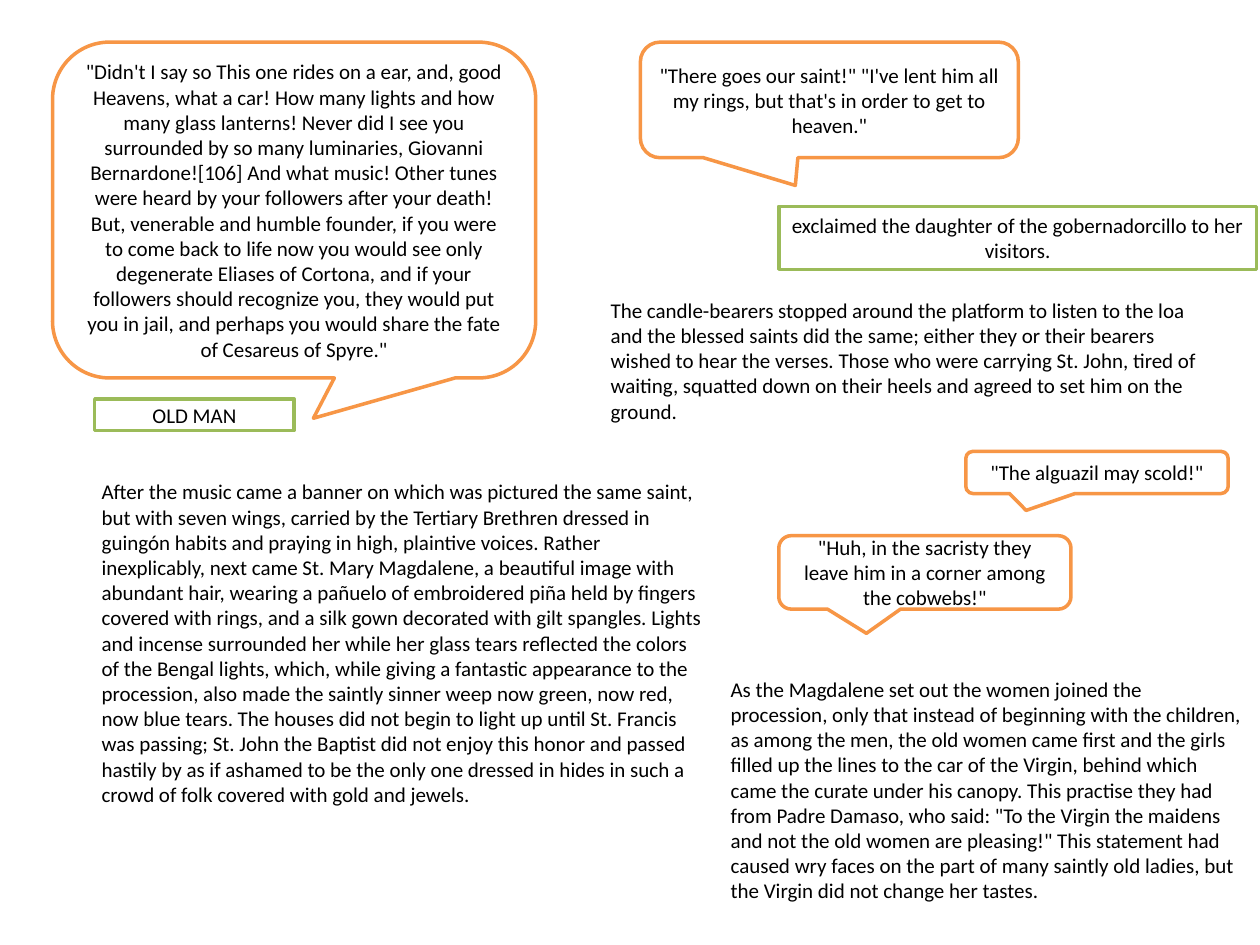
"""Build a slide of story passages, speech bubbles and speaker labels."""
from pptx import Presentation
from pptx.dml.color import RGBColor
from pptx.enum.shapes import MSO_SHAPE
from pptx.enum.text import MSO_ANCHOR, MSO_AUTO_SIZE, PP_ALIGN
from pptx.util import Cm, Pt

BUBBLES = [
    ((1.06, 0.85, 9.74, 6.77), (0.04, 0.62, 0.17),
     "\"Didn't I say so This one rides on a ear, and, good Heavens, what a car! "
     "How many lights and how many glass lanterns! Never did I see you surrounded "
     "by so many luminaries, Giovanni Bernardone![106] And what music! Other tunes "
     "were heard by your followers after your death! But, venerable and humble "
     "founder, if you were to come back to life now you would see only degenerate "
     "Eliases of Cortona, and if your followers should recognize you, they would "
     "put you in jail, and perhaps you would share the fate of Cesareus of Spyre.\""),
    ((12.91, 0.85, 7.62, 2.33), (-0.09, 0.74, 0.17),
     "\"There goes our saint!\" \"I've lent him all my rings, but that's in order "
     "to get to heaven.\""),
    ((19.47, 9.1, 5.29, 0.85), (-0.27, 0.9, 0.17),
     "\"The alguazil may scold!\""),
    ((15.7, 10.8, 5.89, 1.48), (-0.2, 0.83, 0.17),
     "\"Huh, in the sacristy they leave him in a corner among the cobwebs!\""),
]

LABELS = [
    ((1.91, 8.04, 4.02, 0.64), "OLD MAN"),
    ((15.7, 4.16, 9.63, 1.27),
     "exclaimed the daughter of the gobernadorcillo to her visitors."),
]

PASSAGES = [
    ((1.8, 9.53, 12.7, 6.93), [
        "After the music came a banner on which was pictured the same saint, but with "
        "seven wings, carried by the Tertiary Brethren dressed in guingón habits and "
        "praying in high, plaintive voices.",
        "Rather inexplicably, next came St. Mary Magdalene, a beautiful image with "
        "abundant hair, wearing a pañuelo of embroidered piña held by fingers covered "
        "with rings, and a silk gown decorated with gilt spangles.",
        "Lights and incense surrounded her while her glass tears reflected the colors "
        "of the Bengal lights, which, while giving a fantastic appearance to the "
        "procession, also made the saintly sinner weep now green, now red, now blue "
        "tears.",
        "The houses did not begin to light up until St. Francis was passing; St. John "
        "the Baptist did not enjoy this honor and passed hastily by as if ashamed to "
        "be the only one dressed in hides in such a crowd of folk covered with gold "
        "and jewels.",
    ]),
    ((12.06, 5.87, 12.7, 2.82), [
        "The candle-bearers stopped around the platform to listen to the loa and the "
        "blessed saints did the same; either they or their bearers wished to hear the "
        "verses.",
        "Those who were carrying St. John, tired of waiting, squatted down on their "
        "heels and agreed to set him on the ground.",
    ]),
    ((14.48, 13.51, 10.8, 4.88), [
        "As the Magdalene set out the women joined the procession, only that instead "
        "of beginning with the children, as among the men, the old women came first "
        "and the girls filled up the lines to the car of the Virgin, behind which came "
        "the curate under his canopy.",
        "This practise they had from Padre Damaso, who said: \"To the Virgin the "
        "maidens and not the old women are pleasing!\"",
        "This statement had caused wry faces on the part of many saintly old ladies, "
        "but the Virgin did not change her tastes.",
    ]),
]

ORANGE, GREEN, WHITE, BLACK = "F79646", "9BBB59", "FFFFFF", "000000"
FONT = {"name": "Calibri", "size": Pt(12)}
CENTRED = {"word_wrap": True, "vertical_anchor": MSO_ANCHOR.MIDDLE}
FLOWING = {"word_wrap": True, "auto_size": MSO_AUTO_SIZE.SHAPE_TO_FIT_TEXT}


def paint(color_format, color):
    color_format.rgb = RGBColor.from_string(color)


def apply_format(target, values):
    for name, value in values.items():
        setattr(target, name, value)


def write(shape, text, frame_format, alignment):
    apply_format(shape.text_frame, frame_format)
    paragraph = shape.text_frame.paragraphs[0]
    paragraph.alignment = alignment
    run = paragraph.add_run()
    run.text = text
    apply_format(run.font, FONT)
    paint(run.font.color, BLACK)


def add_outlined(slide, kind, box, text, color):
    shape = slide.shapes.add_shape(kind, *map(Cm, box))
    shape.shadow.inherit = False
    shape.fill.solid()
    paint(shape.fill.fore_color, WHITE)
    paint(shape.line.color, color)
    shape.line.width = Pt(2)
    write(shape, text, CENTRED, PP_ALIGN.CENTER)
    return shape


def main():
    presentation = Presentation()
    apply_format(presentation, {"slide_width": Cm(25.4), "slide_height": Cm(19.05)})
    slide = presentation.slides.add_slide(presentation.slide_layouts[6])
    for box, adjustments, text in BUBBLES:
        bubble = add_outlined(slide, MSO_SHAPE.ROUNDED_RECTANGULAR_CALLOUT, box, text, ORANGE)
        for index, value in enumerate(adjustments):
            bubble.adjustments[index] = value
    for box, text in LABELS:
        add_outlined(slide, MSO_SHAPE.RECTANGLE, box, text, GREEN)
    for box, sentences in PASSAGES:
        passage = slide.shapes.add_textbox(*map(Cm, box))
        write(passage, " ".join(sentences), FLOWING, PP_ALIGN.LEFT)
    presentation.save("out.pptx")


if __name__ == "__main__":
    main()
